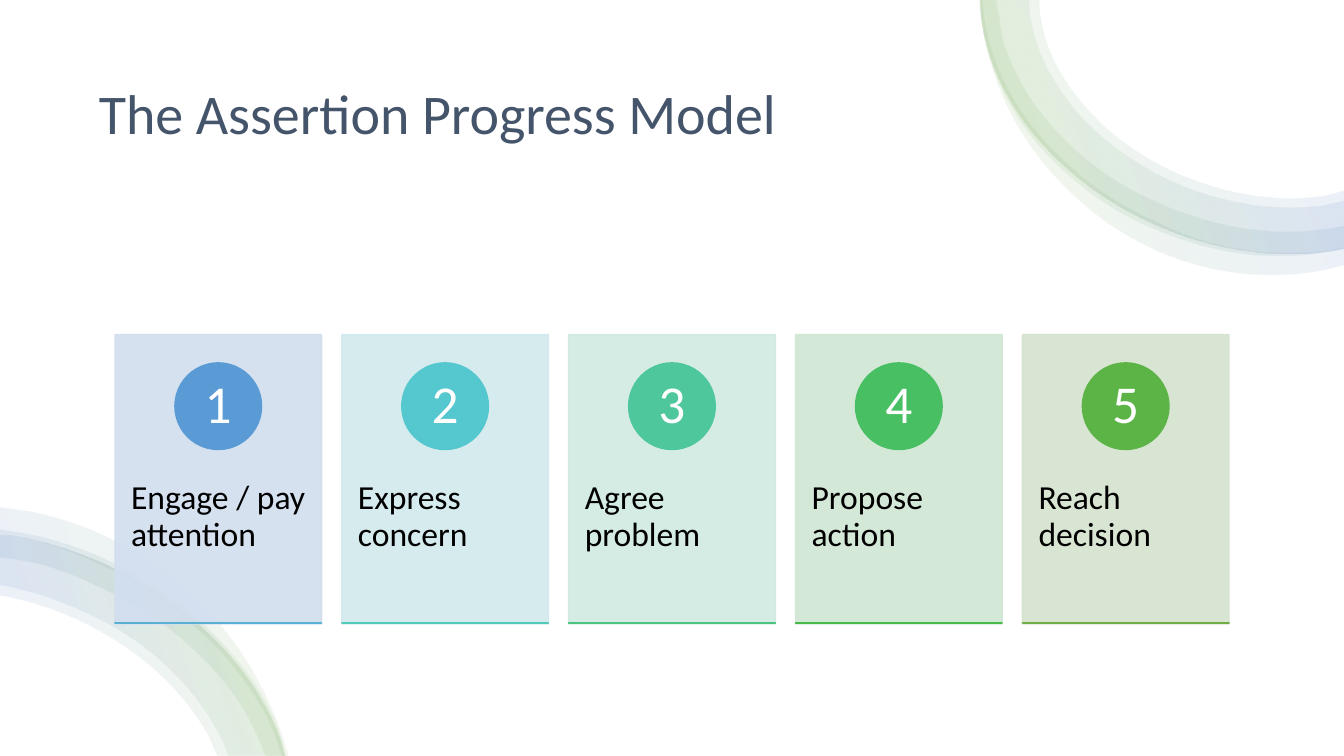
from lxml import etree
from pptx import Presentation
from pptx.dml.color import RGBColor
from pptx.enum.shapes import MSO_SHAPE
from pptx.enum.text import MSO_ANCHOR, PP_ALIGN
from pptx.oxml.ns import qn
from pptx.util import Inches, Pt

FONT = "Calibri"
WHITE = RGBColor(0xFF, 0xFF, 0xFF)
BLACK = RGBColor(0x00, 0x00, 0x00)
SLATE = RGBColor(0x44, 0x54, 0x6A)
GREEN = RGBColor(0x70, 0xAD, 0x47)
BLUE = RGBColor(0x44, 0x72, 0xC4)

SLIDE_WIDTH, SLIDE_HEIGHT = 13.33, 7.5
RIBBON_STOPS = [(2, WHITE), (16, GREEN), (85, BLUE), (100, WHITE)]
RIBBON_OPACITY = 10
CARD_OPACITY = 90

CARD_LEFT, CARD_TOP, CARD_WIDTH, CARD_HEIGHT = 1.14, 3.32, 2.05, 2.87
CARD_PITCH = 2.25
LABEL_TOP, LABEL_HEIGHT = 4.41, 1.72
CIRCLE_TOP, CIRCLE_SIZE = 3.6, 0.86
BASELINE_TOP = 6.18

STEPS = [
    ("Engage / pay attention", RGBColor(0xD2, 0xDE, 0xEF), RGBColor(0x5B, 0x9B, 0xD5), RGBColor(0x58, 0xB1, 0xD2)),
    ("Express concern", RGBColor(0xD1, 0xE9, 0xED), RGBColor(0x55, 0xC7, 0xCE), RGBColor(0x52, 0xCA, 0xB8)),
    ("Agree problem", RGBColor(0xD0, 0xEA, 0xE1), RGBColor(0x4F, 0xC7, 0x9C), RGBColor(0x4C, 0xC3, 0x7F)),
    ("Propose action", RGBColor(0xD0, 0xE6, 0xD4), RGBColor(0x49, 0xBF, 0x64), RGBColor(0x47, 0xBA, 0x49)),
    ("Reach decision", RGBColor(0xD5, 0xE3, 0xCF), RGBColor(0x5C, 0xB4, 0x47), GREEN),
]

TOP_RIM = [(9.73, 0), (9.74, 0.2), (9.92, 1.49, 11.36, 2.51, 12.79, 2.51),
           (12.96, 2.51, 13.13, 2.49, 13.29, 2.46), (13.33, 2.45)]
TOP_BANDS = [
    TOP_RIM + [(13.33, 1.88), (13.19, 1.92), (13.06, 1.95, 12.93, 1.96, 12.79, 1.96),
               (12.49, 1.96, 12.17, 1.9, 11.87, 1.79), (11.58, 1.69, 11.3, 1.53, 11.06, 1.34),
               (10.83, 1.15, 10.63, 0.92, 10.5, 0.68), (10.4, 0.5, 10.34, 0.31, 10.32, 0.12), (10.31, 0)],
    TOP_RIM + [(13.33, 1.98), (13.21, 2.01), (13.08, 2.04, 12.93, 2.05, 12.79, 2.05),
               (12.47, 2.05, 12.15, 1.99, 11.84, 1.88), (11.53, 1.77, 11.24, 1.6, 11, 1.41),
               (10.75, 1.21, 10.56, 0.98, 10.42, 0.73), (10.31, 0.53, 10.25, 0.34, 10.22, 0.14), (10.21, 0)],
    [(9.73, 0), (9.74, 0.18), (9.81, 0.75, 10.1, 1.28, 10.54, 1.68), (10.79, 1.91, 11.08, 2.11, 11.39, 2.24),
     (11.79, 2.42, 12.22, 2.53, 12.65, 2.53), (12.88, 2.53, 13.11, 2.51, 13.33, 2.46), (13.33, 2.23),
     (13.04, 2.29, 12.73, 2.31, 12.42, 2.27), (12.1, 2.23, 11.79, 2.14, 11.5, 2.01),
     (11.21, 1.89, 10.94, 1.72, 10.71, 1.52), (10.35, 1.21, 10.08, 0.82, 9.95, 0.39), (9.89, 0)],
    [(9.71, 0), (9.72, 0.13), (9.77, 0.55, 9.91, 0.97, 10.14, 1.33), (10.33, 1.63, 10.57, 1.89, 10.85, 2.11),
     (11.3, 2.46, 11.81, 2.66, 12.36, 2.71), (12.69, 2.74, 13.01, 2.71, 13.33, 2.62), (13.33, 2.45),
     (13.02, 2.51, 12.7, 2.52, 12.39, 2.48), (12.05, 2.44, 11.73, 2.33, 11.43, 2.18),
     (11.12, 2.04, 10.84, 1.86, 10.59, 1.63), (10.33, 1.4, 10.12, 1.13, 9.97, 0.84),
     (9.84, 0.58, 9.76, 0.29, 9.74, 0)],
]
BOTTOM_RIM = [(2.82, 7.5), (2.76, 7.3), (2.37, 6.29, 1.28, 5.51, 0.11, 5.31), (0, 5.3)]
BOTTOM_BANDS = [
    [(0, 5.04), (0.29, 5.08), (0.59, 5.14, 0.88, 5.24, 1.15, 5.38), (1.51, 5.57, 1.83, 5.81, 2.1, 6.11),
     (2.46, 6.51, 2.71, 6.99, 2.85, 7.48), (2.85, 7.5), (2.79, 7.5), (2.75, 7.37, 2.7, 7.24, 2.64, 7.11),
     (2.46, 6.78, 2.23, 6.49, 1.95, 6.24), (1.67, 5.99, 1.36, 5.78, 1.02, 5.62),
     (0.77, 5.5, 0.5, 5.4, 0.23, 5.34), (0, 5.3)],
    BOTTOM_RIM + [(0, 5.91), (0.02, 5.91), (0.19, 5.94, 0.36, 5.99, 0.53, 6.05),
                  (0.85, 6.17, 1.17, 6.35, 1.43, 6.56), (1.69, 6.77, 1.9, 7.02, 2.05, 7.28),
                  (2.08, 7.33, 2.1, 7.39, 2.12, 7.44), (2.15, 7.5)],
    [(0, 5.26), (0.24, 5.3), (0.52, 5.35, 0.8, 5.44, 1.06, 5.56), (1.41, 5.72, 1.72, 5.92, 2, 6.18),
     (2.34, 6.5, 2.65, 6.89, 2.78, 7.31), (2.83, 7.5), (2.63, 7.5), (2.58, 7.38),
     (2.42, 6.98, 2.16, 6.65, 1.82, 6.36), (1.56, 6.13, 1.26, 5.95, 0.94, 5.81),
     (0.7, 5.69, 0.44, 5.6, 0.18, 5.56), (0, 5.54)],
    BOTTOM_RIM + [(0, 5.81), (0.04, 5.81), (0.21, 5.85, 0.39, 5.89, 0.56, 5.96),
                  (0.9, 6.08, 1.23, 6.26, 1.5, 6.48), (1.77, 6.7, 1.99, 6.96, 2.14, 7.24),
                  (2.17, 7.29, 2.2, 7.34, 2.22, 7.4), (2.26, 7.5)],
]


def set_opacity(color_element, percent):
    etree.SubElement(color_element, qn("a:alpha"), val=str(percent * 1000))


def bend_curves(shape, segments):
    lines = iter(list(shape._element.spPr.iter(qn("a:lnTo"))))
    for segment in segments:
        first = next(lines)
        if len(segment) == 6:
            curve = etree.Element(qn("a:cubicBezTo"))
            first.addprevious(curve)
            for line in (first, next(lines), next(lines)):
                curve.append(line[0])
                line.getparent().remove(line)


def add_band(slide, segments, angle):
    points = [(Inches(segment[i]), Inches(segment[i + 1]))
              for segment in segments for i in range(0, len(segment), 2)]
    builder = slide.shapes.build_freeform(*points[0])
    builder.add_line_segments(points[1:], close=True)
    band = builder.convert_to_shape()
    bend_curves(band, segments[1:])
    band.shadow.inherit = False
    band.line.fill.background()
    band.fill.gradient()
    band.fill.gradient_angle = angle
    stops = next(band._element.spPr.iter(qn("a:gsLst")))
    for stop in list(stops):
        stops.remove(stop)
    for position, color in RIBBON_STOPS:
        stop = etree.SubElement(stops, qn("a:gs"), pos=str(position * 1000))
        set_opacity(etree.SubElement(stop, qn("a:srgbClr"), val=str(color)), RIBBON_OPACITY)


def add_filled_shape(slide, kind, left, top, width, height, color, opacity=None):
    shape = slide.shapes.add_shape(kind, Inches(left), Inches(top), Inches(width), Inches(height))
    shape.shadow.inherit = False
    shape.fill.solid()
    shape.fill.fore_color.rgb = color
    shape.line.color.rgb = color
    shape.line.width = Pt(1)
    if opacity:
        for color_element in list(shape._element.spPr.iter(qn("a:srgbClr"))):
            set_opacity(color_element, opacity)
    return shape


def write_text(shape, text, size, color, align=PP_ALIGN.LEFT, **frame_format):
    frame = shape.text_frame
    frame.word_wrap = True
    for name, value in frame_format.items():
        setattr(frame, name, value)
    paragraph = frame.paragraphs[0]
    paragraph.alignment = align
    paragraph.line_spacing = 0.9
    run = paragraph.add_run()
    run.text = text
    for name, value in {"name": FONT, "size": Pt(size)}.items():
        setattr(run.font, name, value)
    run.font.color.rgb = color


def add_backdrop(slide):
    backdrop = add_filled_shape(slide, MSO_SHAPE.RECTANGLE, 0, 0, SLIDE_WIDTH, SLIDE_HEIGHT, WHITE)
    backdrop.line.fill.background()
    slide.shapes.title._element.addprevious(backdrop._element)


def add_title(slide, text):
    title = slide.shapes.title
    place = {"left": 0.88, "top": 0.5, "width": 11.57, "height": 1.3}
    for name, value in place.items():
        setattr(title, name, Inches(value))
    write_text(title, text, 40, SLATE, vertical_anchor=MSO_ANCHOR.MIDDLE)


def add_step(slide, number, label, card_color, circle_color, baseline_color):
    left = CARD_LEFT + (number - 1) * CARD_PITCH
    add_filled_shape(slide, MSO_SHAPE.RECTANGLE, left, CARD_TOP, CARD_WIDTH, CARD_HEIGHT,
                     card_color, CARD_OPACITY)
    label_box = slide.shapes.add_textbox(
        Inches(left), Inches(LABEL_TOP), Inches(CARD_WIDTH), Inches(LABEL_HEIGHT))
    write_text(label_box, label, 24, BLACK,
               margin_left=Inches(0.16), margin_right=Inches(0.16),
               margin_top=Inches(0.36), margin_bottom=Inches(0.36))
    circle = add_filled_shape(slide, MSO_SHAPE.OVAL, left + (CARD_WIDTH - CIRCLE_SIZE) / 2,
                              CIRCLE_TOP, CIRCLE_SIZE, CIRCLE_SIZE, circle_color)
    write_text(circle, str(number), 38, WHITE, PP_ALIGN.CENTER, vertical_anchor=MSO_ANCHOR.MIDDLE,
               margin_left=0, margin_right=0, margin_top=0, margin_bottom=0)
    add_filled_shape(slide, MSO_SHAPE.RECTANGLE, left, BASELINE_TOP, CARD_WIDTH, 0, baseline_color)


def main():
    presentation = Presentation()
    presentation.slide_width = Inches(SLIDE_WIDTH)
    presentation.slide_height = Inches(SLIDE_HEIGHT)
    slide = presentation.slides.add_slide(presentation.slide_layouts[5])
    add_backdrop(slide)
    add_title(slide, "The Assertion Progress Model")
    for bands, angle in ((TOP_BANDS, 20), (BOTTOM_BANDS, 200)):
        for segments in bands:
            add_band(slide, segments, angle)
    for number, step in enumerate(STEPS, start=1):
        add_step(slide, number, *step)
    presentation.save("out.pptx")


if __name__ == "__main__":
    main()
